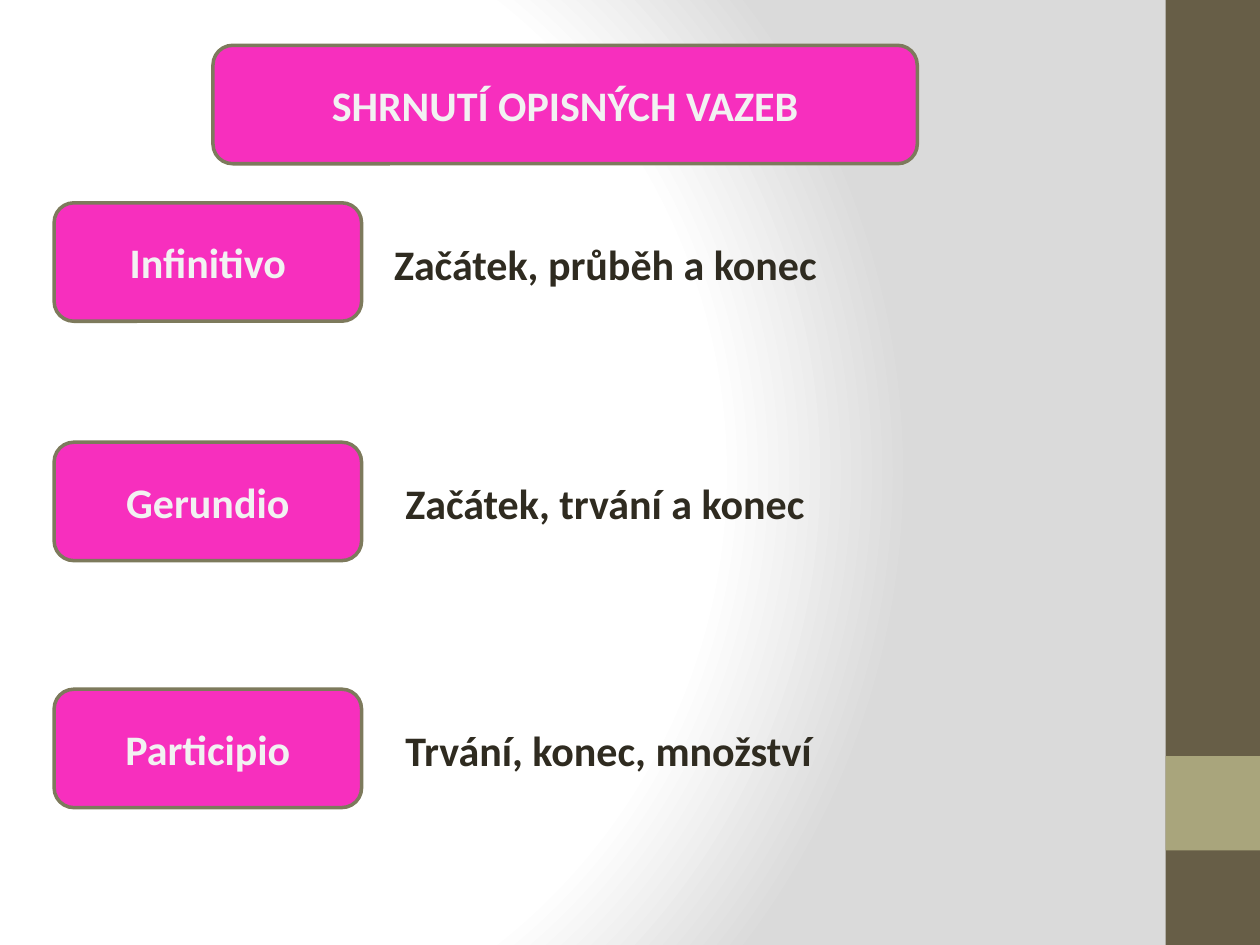
from dataclasses import dataclass

from pptx import Presentation
from pptx import util as u
from pptx.dml import color
from pptx.enum import shapes, text
from pptx.oxml import parse_xml
from pptx.oxml.ns import nsdecls


@dataclass(frozen=True)
class Theme:
    """Colours and type of the slide."""
    white: str = "FFFFFF"
    grey: str = "DADADA"
    brown: str = "675E47"
    olive: str = "A9A57C"
    pink: str = "F72FBE"
    edge: str = "7D7A5C"
    pale: str = "F2F2F2"
    ink: str = "2F2B20"
    font: str = "Calibri"
    size: int = 24
    line: int = 2


THEME = Theme()


def rgb(code):
    """Turn a hex code into a colour."""
    return color.RGBColor.from_string(code)


def inch(box):
    """Turn left, top, width and height into lengths."""
    return [u.Inches(n) for n in box]


def set_back(slide):
    """Fill the background with a round gradient."""
    stops = ((0, THEME.white), (75, THEME.white), (100, THEME.grey))
    marks = "".join(
        f'<a:gs pos="{pos * 1000}"><a:srgbClr val="{tint}"/></a:gs>'
        for pos, tint in stops)
    back = parse_xml(
        f'<p:bg {nsdecls("p", "a")}><p:bgPr><a:gradFill rotWithShape="1">'
        f'<a:gsLst>{marks}</a:gsLst><a:path path="circle">'
        '<a:fillToRect l="20000" t="50000" r="100000" b="50000"/>'
        '</a:path></a:gradFill><a:effectLst/></p:bgPr></p:bg>')
    slide.element.cSld.insert(0, back)


def add_box(slide, kind, box, fill):
    """Add a plain filled shape without a line."""
    shape = slide.shapes.add_shape(kind, *inch(box))
    shape.shadow.inherit = False
    shape.fill.solid()
    shape.fill.fore_color.rgb = rgb(fill)
    shape.line.fill.background()
    return shape


def write(frame, words, tint, align):
    """Write one bold line into a text frame."""
    frame.text = words
    para = frame.paragraphs[0]
    para.alignment = align
    font = para.font
    font.name, font.size, font.bold = THEME.font, u.Pt(THEME.size), True
    font.color.rgb = rgb(tint)


def add_side(slide, box):
    """Add the side band with its square accent."""
    left, top, width, height = box
    rect = shapes.MSO_SHAPE.RECTANGLE
    add_box(slide, rect, box, THEME.brown)
    add_box(slide, rect, (left, top + height * 0.8, width, width), THEME.olive)


def add_tag(slide, box, words):
    """Add a pink rounded tag with centred words."""
    tag = add_box(slide, shapes.MSO_SHAPE.ROUNDED_RECTANGLE, box, THEME.pink)
    tag.line.color.rgb = rgb(THEME.edge)
    tag.line.width = u.Pt(THEME.line)
    tag.text_frame.vertical_anchor = text.MSO_ANCHOR.MIDDLE
    write(tag.text_frame, words, THEME.pale, text.PP_ALIGN.CENTER)


def add_note(slide, box, words):
    """Add a line of dark text that does not wrap."""
    frame = slide.shapes.add_textbox(*inch(box)).text_frame
    frame.word_wrap = False
    frame.auto_size = text.MSO_AUTO_SIZE.SHAPE_TO_FIT_TEXT
    write(frame, words, THEME.ink, text.PP_ALIGN.LEFT)


def add_row(slide, box, name, words, start, width):
    """Add a tag and the note beside it."""
    left, top, _, height = box
    add_tag(slide, box, name)
    note = (left + start, top + (height - 0.5) / 2 + 0.01, width, 0.5)
    add_note(slide, note, words)


def main():
    """Build and save the slide."""
    deck = Presentation()
    deck.slide_width, deck.slide_height = u.Inches(10), u.Inches(7.5)
    slide = deck.slides.add_slide(deck.slide_layouts[6])
    set_back(slide)
    add_side(slide, (9.25, 0, 0.75, 7.5))
    add_tag(slide, (1.69, 0.36, 5.59, 0.94), "SHRNUTÍ OPISNÝCH VAZEB")
    rows = (
        (1.61, "Infinitivo", "Začátek, průběh a konec", 2.6, 3.59),
        (3.51, "Gerundio", "Začátek, trvání a konec", 2.69, 3.4),
        (5.47, "Participio", "Trvání, konec, množství", 2.69, 3.46),
    )
    for top, *parts in rows:
        add_row(slide, (0.43, top, 2.44, 0.94), *parts)
    deck.save("out.pptx")


if __name__ == "__main__":
    main()
